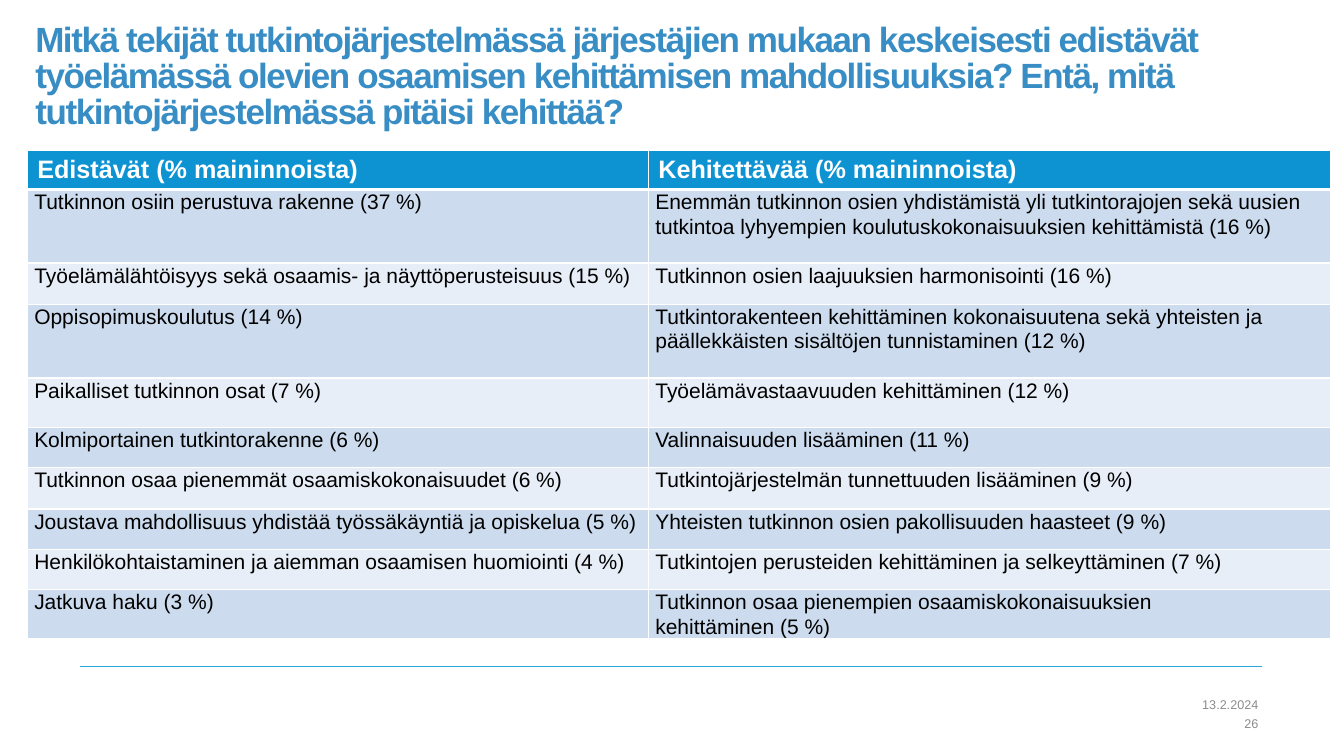
import pptx
import pptx.util
import pptx.dml.color
import pptx.enum.shapes
import pptx.enum.text
import pptx.oxml.ns
from lxml import etree

Inches = pptx.util.Inches
Pt = pptx.util.Pt
qn = pptx.oxml.ns.qn
ANCHOR = pptx.enum.text.MSO_ANCHOR
ALIGN = pptx.enum.text.PP_ALIGN

TITLE = (
    "Mitkä tekijät tutkintojärjestelmässä järjestäjien mukaan keskeisesti edistävät "
    "työelämässä olevien osaamisen kehittämisen mahdollisuuksia? Entä, mitä "
    "tutkintojärjestelmässä pitäisi kehittää?"
)
HEADINGS = ("Edistävät (% maininnoista)", "Kehitettävää (% maininnoista)")
# Row height, strengths, development needs (one line per paragraph)
FACTORS = [
    (0.73, "Tutkinnon osiin perustuva rakenne (37 %)",
     "Enemmän tutkinnon osien yhdistämistä yli tutkintorajojen sekä uusien "
     "tutkintoa lyhyempien koulutuskokonaisuuksien kehittämistä (16 %)"),
    (0.41, "Työelämälähtöisyys sekä osaamis- ja näyttöperusteisuus (15 %)",
     "Tutkinnon osien laajuuksien harmonisointi (16 %)"),
    (0.73, "Oppisopimuskoulutus (14 %)",
     "Tutkintorakenteen kehittäminen kokonaisuutena sekä yhteisten ja "
     "päällekkäisten sisältöjen tunnistaminen (12 %)"),
    (0.49, "Paikalliset tutkinnon osat (7 %)",
     "Työelämävastaavuuden kehittäminen (12 %)"),
    (0.4, "Kolmiportainen tutkintorakenne (6 %)",
     "Valinnaisuuden lisääminen (11 %)"),
    (0.41, "Tutkinnon osaa pienemmät osaamiskokonaisuudet (6 %)",
     "Tutkintojärjestelmän tunnettuuden lisääminen (9 %)"),
    (0.4, "Joustava mahdollisuus yhdistää työssäkäyntiä ja opiskelua (5 %)",
     "Yhteisten tutkinnon osien pakollisuuden haasteet (9 %)"),
    (0.4, "Henkilökohtaistaminen ja aiemman osaamisen huomiointi (4 %)",
     "Tutkintojen perusteiden kehittäminen ja selkeyttäminen (7 %)"),
    (0.49, "Jatkuva haku (3 %)",
     "Tutkinnon osaa pienempien osaamiskokonaisuuksien\nkehittäminen (5 %)"),
]


def color(value):
    return pptx.dml.color.RGBColor.from_string(value)


class SlideBuilder:
    font = "Arial"
    title_color = "378DC4"
    rule_color = "28A7DA"
    footer_color = "8C8C8C"
    header_fill = "0D93D2"
    band_fills = ("CCDCEE", "E7EEF7")
    border_color = "FFFFFF"

    def __init__(self, slide):
        self.slide = slide

    def add_text(self, frame, text, size, text_color, bold=False, align=ALIGN.LEFT,
                 line_spacing=None, spacing=None):
        for index, line in enumerate(text.split("\n")):
            paragraph = frame.paragraphs[0] if index == 0 else frame.add_paragraph()
            paragraph.alignment = align
            if line_spacing:
                paragraph.line_spacing = line_spacing
            run = paragraph.add_run()
            run.text = line
            run.font.name = self.font
            run.font.size = Pt(size)
            run.font.bold = bold
            run.font.color.rgb = color(text_color)
            if spacing:
                run._r.get_or_add_rPr().set("spc", str(spacing))

    def place(self, shape, box, margins, anchor):
        shape.left, shape.top, shape.width, shape.height = map(Inches, box)
        frame = shape.text_frame
        frame.word_wrap = True
        frame.auto_size = pptx.enum.text.MSO_AUTO_SIZE.NONE
        frame.vertical_anchor = anchor
        (frame.margin_left, frame.margin_top,
         frame.margin_right, frame.margin_bottom) = map(Inches, margins)
        return frame

    def title(self, text, box):
        frame = self.place(self.slide.shapes.title, box, (0, 0, 0, 0), ANCHOR.TOP)
        self.add_text(frame, text, 25, self.title_color, bold=True,
                      line_spacing=0.85, spacing=-100)

    def footer(self, text, box):
        shape = self.slide.shapes.add_textbox(*map(Inches, box))
        frame = self.place(shape, box, (0.1, 0.05, 0, 0.05), ANCHOR.MIDDLE)
        self.add_text(frame, text, 9, self.footer_color, align=ALIGN.RIGHT)

    def rule(self, left, right, top):
        line = self.slide.shapes.add_connector(
            pptx.enum.shapes.MSO_CONNECTOR.STRAIGHT,
            Inches(left), Inches(top), Inches(right), Inches(top))
        line.line.color.rgb = color(self.rule_color)
        line.line.width = Pt(1)
        etree.SubElement(line._element.spPr, qn("a:effectLst"))

    def borders(self, cell, top, bottom):
        properties = cell._tc.get_or_add_tcPr()
        for side, width in (("L", 1), ("R", 1), ("T", top), ("B", bottom)):
            border = etree.SubElement(properties, qn(f"a:ln{side}"), w=str(Pt(width)))
            fill = etree.SubElement(border, qn("a:solidFill"))
            etree.SubElement(fill, qn("a:srgbClr"), val=self.border_color)

    def fill(self, cell, value):
        cell.fill.solid()
        cell.fill.fore_color.rgb = color(value)

    def table(self, headings, rows, left, top, widths, header_height):
        heights = [header_height] + [row[0] for row in rows]
        table = self.slide.shapes.add_table(
            len(heights), len(widths), Inches(left), Inches(top),
            Inches(sum(widths)), Inches(sum(heights))).table
        for column, width in zip(table.columns, widths):
            column.width = Inches(width)
        for row, height in zip(table.rows, heights):
            row.height = Inches(height)

        # Header row
        for cell, text in zip(table.rows[0].cells, headings):
            self.borders(cell, 1, 3)
            self.fill(cell, self.header_fill)
            self.add_text(cell.text_frame, text, 18, "FFFFFF", bold=True)

        # Banded body rows
        for index, (_, *texts) in enumerate(rows):
            for cell, text in zip(table.rows[index + 1].cells, texts):
                self.borders(cell, 3 if index == 0 else 1, 1)
                self.fill(cell, self.band_fills[index % 2])
                cell.margin_left = cell.margin_right = Inches(0.07)
                cell.margin_top = cell.margin_bottom = Inches(0)
                self.add_text(cell.text_frame, text, 15, "000000", line_spacing=1.05)


def main():
    presentation = pptx.Presentation()
    presentation.slide_width = Inches(13.33)
    presentation.slide_height = Inches(7.5)
    title_only = presentation.slide_layouts[5]
    builder = SlideBuilder(presentation.slides.add_slide(title_only))

    # Title and table
    builder.rule(0.79, 12.52, 6.61)
    builder.title(TITLE, (0.35, 0.24, 11.73, 1.15))
    builder.table(HEADINGS, FACTORS, 0.27, 1.49, (6.16, 6.77), 0.39)

    # Date and slide number
    builder.footer("13.2.2024", (7.2, 6.89, 5.28, 0.2))
    builder.footer("26", (7.2, 7.09, 5.28, 0.18))

    presentation.save("out.pptx")


if __name__ == "__main__":
    main()
